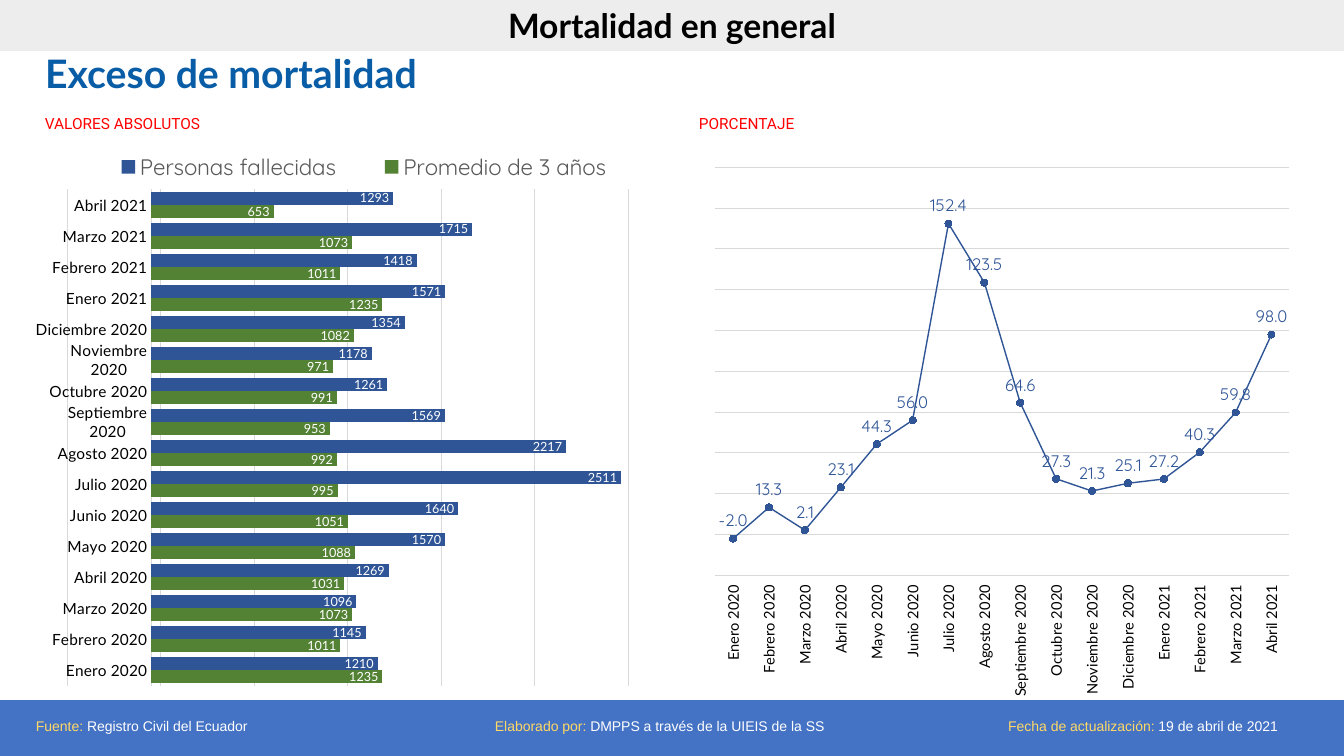
from dataclasses import dataclass

from lxml import etree
from pptx import Presentation, util as u
from pptx.chart.data import CategoryChartData
from pptx.dml.color import RGBColor
from pptx.enum import chart as ch, shapes, text
from pptx.oxml import parse_xml
from pptx.oxml.ns import nsdecls, qn

PX = 914400 / 100.8
COLORS = {
    "footer": "4472C4", "band": "EDEDED", "title": "095DA6", "red": "FF0000",
    "gold": "FFD966", "white": "FFFFFF", "black": "000000", "grid": "D9D9D9",
    "legend": "595959", "blue": "2F5597", "green": "548235",
}
MONTHS = ["Enero", "Febrero", "Marzo", "Abril", "Mayo", "Junio", "Julio", "Agosto",
          "Septiembre", "Octubre", "Noviembre", "Diciembre"]
CATEGORIES = [f"{m} 2020" for m in MONTHS] + [f"{m} 2021" for m in MONTHS[:4]]
AVERAGE = [1235, 1011, 1073, 1031, 1088, 1051, 995, 992,
           953, 991, 971, 1082, 1235, 1011, 1073, 653]
DEATHS = [1210, 1145, 1096, 1269, 1570, 1640, 2511, 2217,
          1569, 1261, 1178, 1354, 1571, 1418, 1715, 1293]
EXCESS = [-2, 13.3, 2.1, 23.1, 44.3, 56, 152.4, 123.5,
          64.6, 27.3, 21.3, 25.1, 27.2, 40.3, 59.8, 98]


@dataclass(frozen=True)
class Box:
    left: int
    top: int
    width: int
    height: int

    def emu(self) -> list[int]:
        return [round(v * PX) for v in (self.left, self.top, self.width, self.height)]


@dataclass(frozen=True)
class FooterNote:
    box: Box
    label: str
    value: str
    align: text.PP_ALIGN = text.PP_ALIGN.LEFT


NOTES = [
    FooterNote(Box(26, 699, 297, 57), "Fuente: ", "Registro Civil del Ecuador"),
    FooterNote(Box(485, 699, 435, 57), "Elaborado por: ", "DMPPS a través de la UIEIS de la SS"),
    FooterNote(Box(973, 699, 340, 57), "Fecha de actualización: ", "19 de abril de 2021",
               text.PP_ALIGN.CENTER),
]


def rgb(name: str) -> RGBColor:
    return RGBColor.from_string(COLORS[name])


def set_font(font, name: str, size: float, color: str, bold: bool = False) -> None:
    font.name, font.size, font.bold = name, u.Pt(size), bold
    font.color.rgb = rgb(color)


def write(s, *runs: tuple[str, str], font: str, size: float, bold: bool = False,
          align=text.PP_ALIGN.LEFT, anchor=text.MSO_ANCHOR.TOP, spacing: float = 1.0) -> None:
    """Fill a shape with one paragraph of (text, colour) runs."""
    tf = s.text_frame
    tf.word_wrap, tf.auto_size, tf.vertical_anchor = True, text.MSO_AUTO_SIZE.NONE, anchor
    p = tf.paragraphs[0]
    p.alignment, p.line_spacing = align, spacing
    for words, color in runs:
        r = p.add_run()
        r.text = words
        set_font(r.font, font, size, color, bold)


def add_band(slide, box: Box, color: str):
    s = slide.shapes.add_shape(shapes.MSO_SHAPE.RECTANGLE, *box.emu())
    s.shadow.inherit = False
    s.fill.solid()
    s.fill.fore_color.rgb = rgb(color)
    s.line.fill.background()
    return s


def layout_xml(x: float, y: float, w: float, h: float, inner: bool):
    target = '<c:layoutTarget val="inner"/>' if inner else ""
    return parse_xml(
        f'<c:layout {nsdecls("c")}><c:manualLayout>{target}<c:xMode val="edge"/>'
        f'<c:yMode val="edge"/><c:x val="{x}"/><c:y val="{y}"/><c:w val="{w}"/>'
        f'<c:h val="{h}"/></c:manualLayout></c:layout>')


def add_chart(slide, kind, box: Box, series: dict[str, list], fmt: str,
              plot_area: tuple, axis_size: float, scale: tuple[float, float, float]):
    """Add a chart with a hidden value axis and a fixed inner plot area."""
    data = CategoryChartData(number_format=fmt)
    data.categories = CATEGORIES
    for name, values in series.items():
        data.add_series(name, values)
    chart = slide.shapes.add_chart(kind, *box.emu(), data).chart
    chart.has_title = chart.has_legend = False
    set_font(chart.font, "Quicksand", 10, "black")

    area = chart.plots[0]._element.getparent()
    for old in area.findall(qn("c:layout")):
        area.remove(old)
    area.insert(0, layout_xml(*plot_area, inner=True))

    cat, val = chart.category_axis, chart.value_axis
    cat.major_tick_mark = cat.minor_tick_mark = ch.XL_TICK_MARK.NONE
    cat.has_major_gridlines = False
    set_font(cat.tick_labels.font, "Lato", axis_size, "black")
    val.visible = False
    val.has_major_gridlines = True
    val.minimum_scale, val.maximum_scale, val.major_unit = scale
    for line in (cat.format.line, val.major_gridlines.format.line):
        line.color.rgb, line.width = rgb("grid"), u.Pt(0.75)
    return chart


def label_series(series, fmt: str, position, font: str, size: float, color: str) -> None:
    labels = series.data_labels
    labels.show_value, labels.position = True, position
    labels.number_format, labels.number_format_is_linked = fmt, False
    set_font(labels.font, font, size, color)


def add_deaths_chart(slide) -> None:
    chart = add_chart(slide, ch.XL_CHART_TYPE.BAR_CLUSTERED, Box(35, 133, 645, 564),
                      {"Promedio de 3 años": AVERAGE, "Personas fallecidas": DEATHS}, "0",
                      (0.05, 0.1, 0.87, 0.88), 11, (-450, 2550, 500))
    plot = chart.plots[0]
    plot.gap_width, plot.overlap, plot.vary_by_categories = 34, 0, False
    for series, color in zip(plot.series, ("green", "blue")):
        series.format.fill.solid()
        series.format.fill.fore_color.rgb = rgb(color)
        label_series(series, "0", ch.XL_LABEL_POSITION.INSIDE_END, "Lato", 9, "white")
    chart.has_legend = True
    legend = chart.legend
    legend.position, legend.include_in_layout = ch.XL_LEGEND_POSITION.RIGHT, False
    set_font(legend.font, "Quicksand", 16, "legend")
    for old in legend._element.findall(qn("c:layout")):
        legend._element.remove(old)
    legend._element.find(qn("c:legendPos")).addnext(
        layout_xml(0.07, 0.02, 0.88, 0.08, inner=False))


def add_excess_chart(slide) -> None:
    chart = add_chart(slide, ch.XL_CHART_TYPE.LINE_MARKERS_STACKED, Box(703, 151, 611, 546),
                      {"Series 1": EXCESS}, "0.0", (0.02, 0.03, 0.94, 0.75), 10.5,
                      (-20, 180, 20))
    chart.plots[0].vary_by_categories = False
    chart.value_axis.crosses = ch.XL_AXIS_CROSSES.MINIMUM
    cat = chart.category_axis
    cat.tick_label_position = ch.XL_TICK_LABEL_POSITION.LOW
    body = cat._element.find(qn("c:txPr")).find(qn("a:bodyPr"))
    body.set("rot", "-5400000")
    body.set("vert", "horz")
    series = chart.plots[0].series[0]
    series.smooth = False
    series.format.line.color.rgb, series.format.line.width = rgb("blue"), u.Pt(1)
    marker = series.marker
    marker.style, marker.size = ch.XL_MARKER_STYLE.CIRCLE, 5
    marker.format.fill.solid()
    marker.format.fill.fore_color.rgb = rgb("blue")
    marker.format.line.color.rgb = rgb("blue")
    label_series(series, "0.0", ch.XL_LABEL_POSITION.ABOVE, "Quicksand", 12, "blue")


def main() -> None:
    prs = Presentation()
    prs.slide_width, prs.slide_height = round(1344 * PX), round(756 * PX)
    slide = prs.slides.add_slide(prs.slide_layouts[5])

    title = slide.shapes.title
    title.left, title.top, title.width, title.height = Box(35, 50, 853, 49).emu()
    write(title, ("Exceso de mortalidad", "title"), font="Lato", size=28, bold=True, spacing=0.9)

    add_band(slide, Box(0, 700, 1344, 56), "footer")
    header = add_band(slide, Box(0, 0, 1344, 51), "band")
    write(header, ("Mortalidad en general", "black"), font="Lato", size=24, bold=True,
          align=text.PP_ALIGN.CENTER, anchor=text.MSO_ANCHOR.MIDDLE)

    for left, heading in ((35, "VALORES ABSOLUTOS"), (689, "PORCENTAJE")):
        s = slide.shapes.add_textbox(*Box(left, 109, 596, 29).emu())
        write(s, (heading, "red"), font="Roboto", size=11)

    add_deaths_chart(slide)
    add_excess_chart(slide)

    for note in NOTES:
        s = slide.shapes.add_textbox(*note.box.emu())
        write(s, (note.label, "gold"), (note.value, "white"), font="Arial", size=10,
              align=note.align, anchor=text.MSO_ANCHOR.MIDDLE, spacing=0.9)

    prs.save("out.pptx")


if __name__ == "__main__":
    main()
